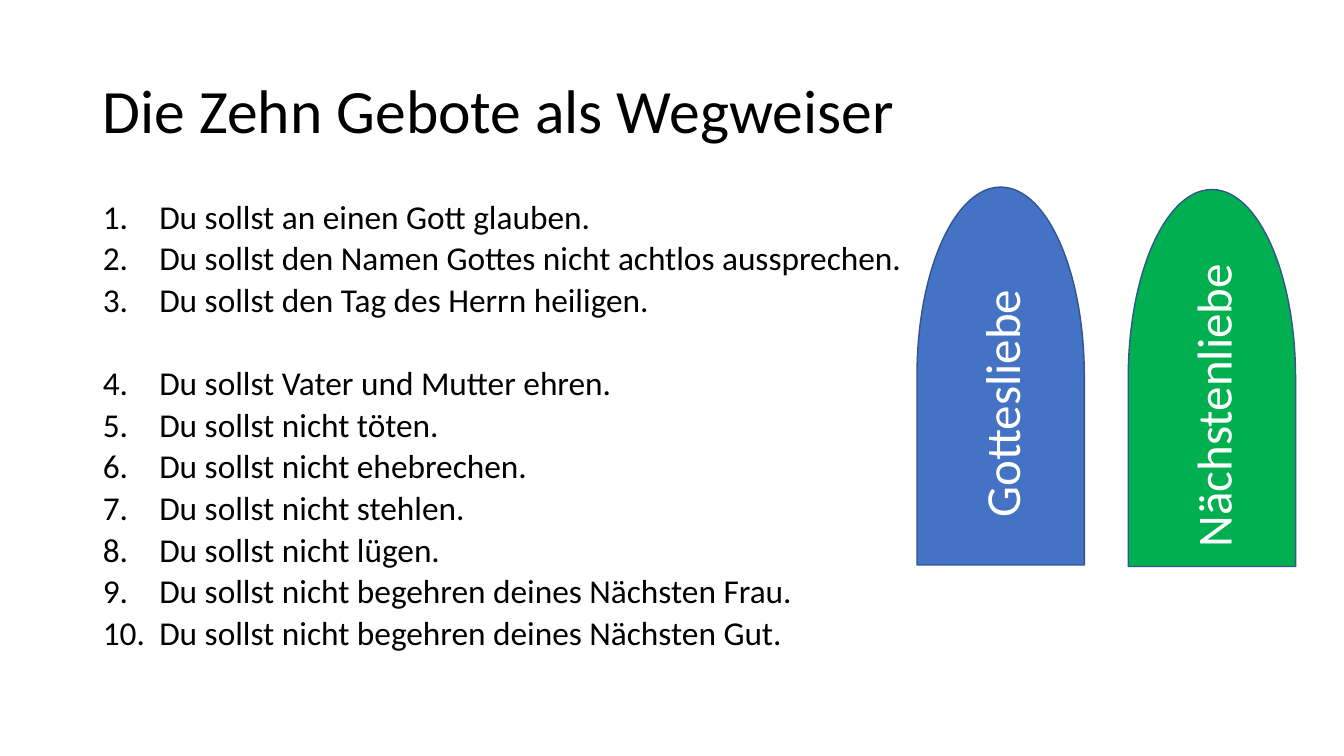
"""Build a slide that lists the Ten Commandments beside two signposts."""
from lxml.etree import SubElement
from pptx import Presentation
from pptx.dml.color import RGBColor
from pptx.enum.shapes import MSO_SHAPE
from pptx.enum.text import MSO_ANCHOR, MSO_AUTO_SIZE, PP_ALIGN
from pptx.oxml.ns import qn
from pptx.util import Inches, Pt

COLORS = {
    "text": "000000",
    "light": "FFFFFF",
    "god": "4472C4",
    "neighbour": "00B050",
    "outline": "325491",
}
COMMANDMENTS = [
    "Du sollst an einen Gott glauben.",
    "Du sollst den Namen Gottes nicht achtlos aussprechen.",
    "Du sollst den Tag des Herrn heiligen.",
    "Du sollst Vater und Mutter ehren.",
    "Du sollst nicht töten.",
    "Du sollst nicht ehebrechen.",
    "Du sollst nicht stehlen.",
    "Du sollst nicht lügen.",
    "Du sollst nicht begehren deines Nächsten Frau.",
    "Du sollst nicht begehren deines Nächsten Gut.",
]
FIRST_NEIGHBOUR_COMMANDMENT = 4
SIGNPOSTS = [
    ("Gottesliebe", "god", 8.05, 2.9, 3.75),
    ("Nächstenliebe", "neighbour", 10.15, 2.92, 3.74),
]


def add_span(para, text, size, color):
    span = para.add_run()
    span.text = text
    span.font.name = "Calibri"
    span.font.size = Pt(size)
    span.font.color.rgb = RGBColor.from_string(COLORS[color])


def place(box, left, top, width, height):
    box.left, box.top = Inches(left), Inches(top)
    box.width, box.height = Inches(width), Inches(height)


deck = Presentation()
deck.slide_width = Inches(13.33)
deck.slide_height = Inches(7.5)
page = deck.slides.add_slide(deck.slide_layouts[1])

title = page.shapes.title
place(title, 0.92, 0.4, 11.5, 1.45)
title.text_frame.auto_size = MSO_AUTO_SIZE.NONE
title.text_frame.vertical_anchor = MSO_ANCHOR.MIDDLE
para = title.text_frame.paragraphs[0]
para.alignment = PP_ALIGN.LEFT
para.line_spacing = 0.9
add_span(para, "Die Zehn Gebote als Wegweiser", 44, "text")

body = page.placeholders[1]
place(body, 0.92, 2, 11.5, 4.76)
frame = body.text_frame
frame.auto_size = MSO_AUTO_SIZE.NONE
frame.vertical_anchor = MSO_ANCHOR.TOP
for number, commandment in enumerate(COMMANDMENTS, 1):
    para = frame.paragraphs[0] if number == 1 else frame.add_paragraph()
    para.line_spacing = 0.7
    para.space_before = Pt(39.7 if number == FIRST_NEIGHBOUR_COMMANDMENT else 9.7)
    add_span(para, commandment, 23.8, "text")
    properties = para._p.get_or_add_pPr()
    properties.set("marL", str(Inches(0.56)))
    properties.set("indent", str(Inches(-0.56)))
    SubElement(properties, qn("a:buFont"), typeface="+mj-lt")
    SubElement(properties, qn("a:buAutoNum"), type="arabicPeriod")

for label, color, left, top, length in SIGNPOSTS:
    signpost = page.shapes.add_shape(
        MSO_SHAPE.FLOWCHART_DELAY, Inches(left), Inches(top), Inches(length), Inches(1.66)
    )
    signpost.rotation = 270
    signpost.shadow.inherit = False
    signpost.fill.solid()
    signpost.fill.fore_color.rgb = RGBColor.from_string(COLORS[color])
    signpost.line.color.rgb = RGBColor.from_string(COLORS["outline"])
    signpost.line.width = Pt(1)
    signpost.text_frame.vertical_anchor = MSO_ANCHOR.MIDDLE
    para = signpost.text_frame.paragraphs[0]
    para.alignment = PP_ALIGN.CENTER
    add_span(para, label, 35, "light")

deck.save("out.pptx")
